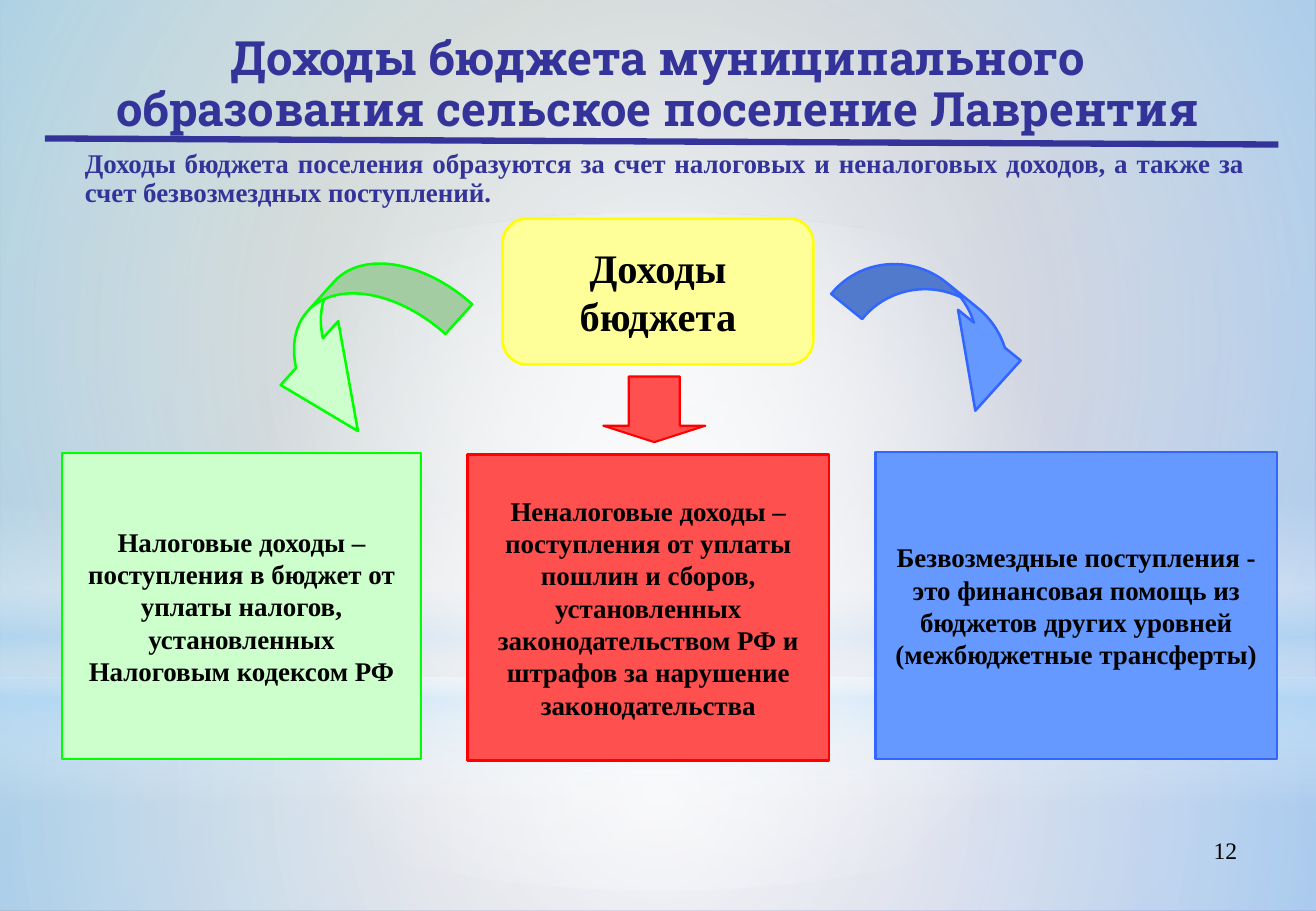
"""Build the slide on the income of the Lavrentiya settlement budget."""
from lxml import etree
from pptx import Presentation
from pptx.dml.color import RGBColor
from pptx.enum.shapes import MSO_CONNECTOR, MSO_SHAPE
from pptx.enum.text import MSO_ANCHOR, PP_ALIGN
from pptx.oxml.ns import qn
from pptx.util import Inches, Pt

RECT, OVAL, ROUNDED = MSO_SHAPE.RECTANGLE, MSO_SHAPE.OVAL, MSO_SHAPE.ROUNDED_RECTANGLE
CURVE_DOWN, CURVE_UP, DOWN = MSO_SHAPE.CURVED_DOWN_ARROW, MSO_SHAPE.CURVED_UP_ARROW, MSO_SHAPE.DOWN_ARROW
TOP, MIDDLE = MSO_ANCHOR.TOP, MSO_ANCHOR.MIDDLE
CENTER, RIGHT, JUSTIFY = PP_ALIGN.CENTER, PP_ALIGN.RIGHT, PP_ALIGN.JUSTIFY

WIDTH, HEIGHT = 10.84, 7.5
THEME = {
    "heading": {"name": "Roboto Slab", "size": 28, "color": "333399", "bold": True},
    "lead": {"name": "Times New Roman", "size": 16, "color": "333399", "bold": True},
    "hub": {"name": "Times New Roman", "size": 24, "color": "000000", "bold": True},
    "card": {"name": "Times New Roman", "size": 16, "color": "000000", "bold": True},
    "number": {"name": "Times New Roman", "size": 14, "color": "000000", "bold": False},
    "rule": "333399",
    "yellow": ("FFFF99", "FFFF00"),
    "green": ("CCFFCC", "00FF00"),
    "red": ("FF5050", "FF0000"),
    "blue": ("6699FF", "3366FF"),
    "page": [(0, "96AB94", 100), (100, "8488C4", 100)],
    "floor": [(0, "FFFFFF", 91), (37, "FFFFFF", 76), (100, "B4DCFA", 79)],
    "wall": [(0, "FFFFFF", 89), (48, "FFFFFF", 62), (100, "B4DCFA", 79)],
    "horizon": [(0, "FFFFFF", 0), (29, "FFFFFF", 30), (45, "B4DCFA", 40),
                (55, "FFFFFF", 26), (65, "B4DCFA", 60), (100, "FFFFFF", 0)],
    "glow": [(0, "FFFFFF", 100), (56, "FFFFFF", 0)],
}

HORIZON_LINE = 5.58
BACKDROP = [
    (RECT, (0, HORIZON_LINE, WIDTH, HEIGHT - HORIZON_LINE), "floor", None),
    (RECT, (0, 0, WIDTH, HORIZON_LINE), "wall", None),
    (RECT, (0, 4.12, WIDTH, 2.5), "horizon", 90),
    (OVAL, (0, 1.75, WIDTH, 5.58), "glow", None),
]
TEXTS = [
    ("12", (7.76, 6.83, 2.53, 0.52), "number", RIGHT, TOP, 1.0),
    ("Доходы бюджета муниципального образования сельское поселение Лаврентия",
     (0.54, 0.19, 9.75, 1.03), "heading", CENTER, MIDDLE, 0.9),
    ("Доходы бюджета поселения образуются за счет налоговых и неналоговых доходов, "
     "а также за счет безвозмездных поступлений.",
     (0.6, 1.19, 9.75, 0.58), "lead", JUSTIFY, TOP, 0.9),
]
RULE = (0.37, 1.14, 10.53, 1.19)
BLOCKS = [
    (ROUNDED, "Доходы бюджета", (4.14, 1.8, 2.56, 1.2), "yellow", "hub", (0.14, 0.05)),
    (RECT, "Налоговые доходы – поступления в бюджет от уплаты налогов, установленных "
     "Налоговым кодексом РФ", (0.51, 3.73, 2.96, 2.52), "green", "card", (0.12, 0)),
    (RECT, "Неналоговые доходы – поступления от уплаты пошлин и сборов, установленных "
     "законодательством РФ и штрафов за нарушение законодательства",
     (3.85, 3.74, 2.98, 2.52), "red", "card", (0, 0)),
    (RECT, "Безвозмездные поступления - это финансовая помощь из бюджетов других уровней "
     "(межбюджетные трансферты)", (7.21, 3.72, 3.31, 2.53), "blue", "card", (0.12, 0)),
]
ARROWS = [
    (CURVE_DOWN, (6.85, 2.41, 1.86, 0.67), "blue", 39, (0.49, 0.99, 0.83), 1.5),
    (CURVE_UP, (2.06, 2.35, 1.76, 0.97), "green", 132, (0.34, 0.73, 0.75), 1.5),
    (DOWN, (4.97, 3.1, 0.84, 0.54), "red", 0, (0.5, 0.25), 1.25),
]


def inches(values):
    return [Inches(value) for value in values]


def paint_gradient(fill, owner, stops, angle):
    """Fill with stops of (position, colour, opacity); no angle means a radial fill."""
    fill.gradient()
    gradient = next(owner.iter(qn("a:gradFill")))
    for child in list(gradient):
        gradient.remove(child)
    stop_list = etree.SubElement(gradient, qn("a:gsLst"))
    for position, color, opacity in stops:
        stop = etree.SubElement(stop_list, qn("a:gs"), pos=str(position * 1000))
        tint = etree.SubElement(stop, qn("a:srgbClr"), val=color)
        if opacity < 100:
            etree.SubElement(tint, qn("a:alpha"), val=str(opacity * 1000))
    if angle is None:
        circle = etree.SubElement(gradient, qn("a:path"), path="circle")
        edges = {side: "50000" for side in "ltrb"}
        etree.SubElement(circle, qn("a:fillToRect"), **edges)
    else:
        etree.SubElement(gradient, qn("a:lin"), ang=str(angle * 60000), scaled="0")


def write(box, text, style, align, anchor, margins, spacing=1.0):
    frame = box.text_frame
    side, edge = inches(margins)
    layout = {"word_wrap": True, "vertical_anchor": anchor, "margin_left": side,
              "margin_right": side, "margin_top": edge, "margin_bottom": edge}
    for name, value in layout.items():
        setattr(frame, name, value)
    para = frame.paragraphs[0]
    para.alignment, para.line_spacing = align, spacing
    span = para.add_run()
    span.text = text
    look = THEME[style]
    for name, value in {"name": look["name"], "size": Pt(look["size"]), "bold": look["bold"]}.items():
        setattr(span.font, name, value)
    span.font.color.rgb = RGBColor.from_string(look["color"])


def add_colored(page, kind, place, palette, weight):
    shape = page.shapes.add_shape(kind, *inches(place))
    shape.shadow.inherit = False
    fill, line = THEME[palette]
    shape.fill.solid()
    shape.fill.fore_color.rgb = RGBColor.from_string(fill)
    shape.line.color.rgb = RGBColor.from_string(line)
    shape.line.width = Pt(weight)
    return shape


def add_rule(page):
    rule = page.shapes.add_connector(MSO_CONNECTOR.STRAIGHT, *inches(RULE))
    rule.line.color.rgb = RGBColor.from_string(THEME["rule"])
    rule.line.width = Pt(3.75)
    etree.SubElement(rule._element.spPr, qn("a:effectLst"))


def main():
    deck = Presentation()
    deck.slide_width, deck.slide_height = inches((WIDTH, HEIGHT))
    page = deck.slides.add_slide(deck.slide_layouts[6])
    paint_gradient(page.background.fill, page._element, THEME["page"], 45)
    for kind, place, stops, angle in BACKDROP:
        shape = page.shapes.add_shape(kind, *inches(place))
        shape.shadow.inherit = False
        shape.line.fill.background()
        paint_gradient(shape.fill, shape._element, THEME[stops], angle)
    for text, place, style, align, anchor, spacing in TEXTS:
        box = page.shapes.add_textbox(*inches(place))
        write(box, text, style, align, anchor, (0.1, 0.05), spacing)
    add_rule(page)
    for kind, text, place, palette, style, margins in BLOCKS:
        block = add_colored(page, kind, place, palette, 1.5)
        write(block, text, style, CENTER, MIDDLE, margins)
    for kind, place, palette, turn, bends, weight in ARROWS:
        arrow = add_colored(page, kind, place, palette, weight)
        arrow.rotation = turn
        for index, bend in enumerate(bends):
            arrow.adjustments[index] = bend
    deck.save("out.pptx")


if __name__ == "__main__":
    main()
